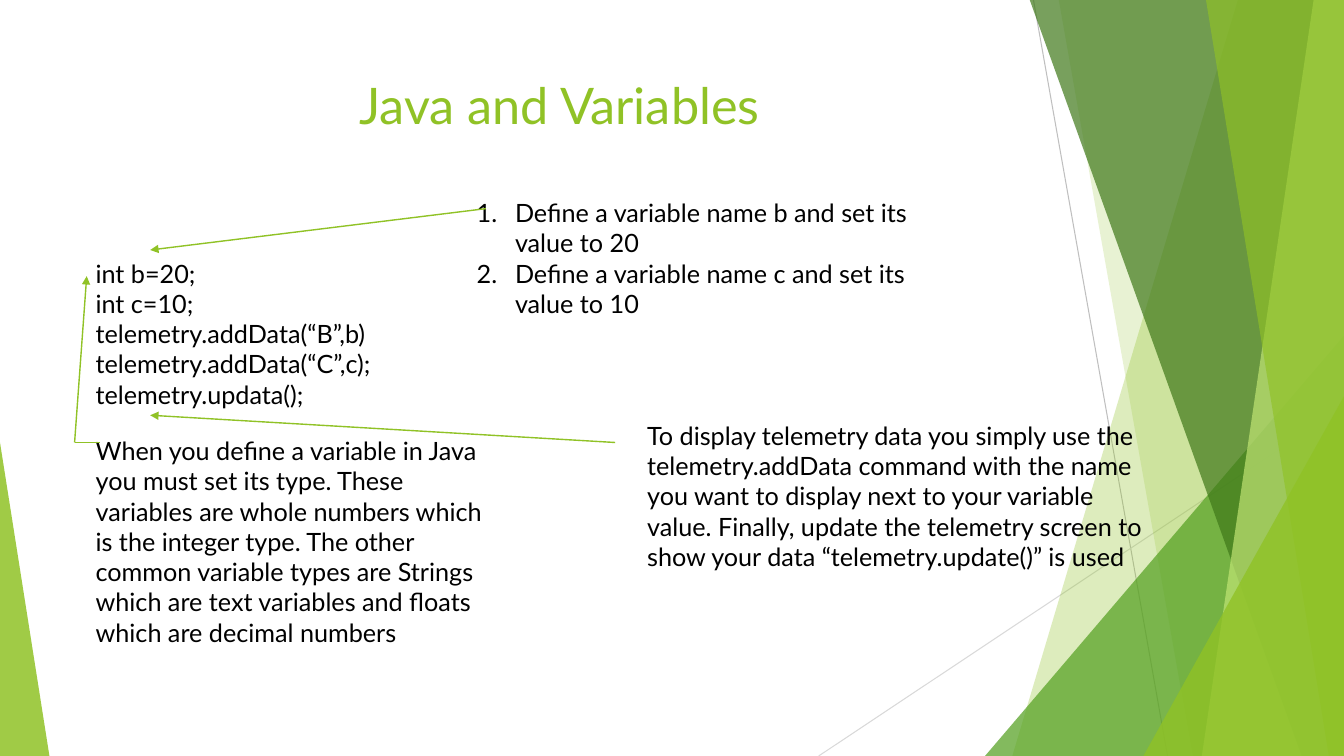
from lxml.etree import SubElement
from pptx import Presentation
from pptx.dml.color import RGBColor
from pptx.enum.shapes import MSO_CONNECTOR, MSO_SHAPE
from pptx.enum.text import MSO_ANCHOR, MSO_AUTO_SIZE, PP_ALIGN
from pptx.oxml.ns import qn
from pptx.util import Inches, Pt

FONT = "Lato"
GREEN = "90C226"
BLACK = "000000"
TOP, RIGHT, BOTTOM = -0.01, 13.33, 7.5

CODE = [
    "int b=20;",
    "int c=10;",
    "telemetry.addData(“B”,b)",
    "telemetry.addData(“C”,c);",
    "telemetry.updata();",
]
STEPS = [
    "Define a variable name b and set its value to 20",
    "Define a variable name c and set its value to 10",
]
TYPES = [
    "When you define a variable in Java you must set its type. These variables "
    "are whole numbers which is the integer type. The other common variable "
    "types are Strings which are text variables and floats which are decimal numbers"
]
DISPLAY = [
    "To display telemetry data you simply use the telemetry.addData command with "
    "the name you want to display next to your variable value. Finally, update "
    "the telemetry screen to show your data “telemetry.update()” is used"
]


def rgb(color):
    return RGBColor.from_string(color)


def style_panel(sp, color, opacity):
    sp.shadow.inherit = False
    sp.line.fill.background()
    sp.fill.solid()
    sp.fill.fore_color.rgb = rgb(color)
    srgb = sp.fill._xPr.find(qn("a:solidFill"))[0]
    SubElement(srgb, qn("a:alpha"), val=str(opacity * 1000))


def add_band(s, top_x, bottom_x, color, opacity):
    builder = s.shapes.build_freeform(Inches(top_x), Inches(TOP), scale=1.0)
    corners = [(RIGHT, TOP), (RIGHT, BOTTOM), (bottom_x, BOTTOM)]
    builder.add_line_segments([(Inches(x), Inches(y)) for x, y in corners], close=True)
    style_panel(builder.convert_to_shape(), color, opacity)


def add_triangle(s, left, top, right, apex, color, opacity):
    sp = s.shapes.add_shape(
        MSO_SHAPE.ISOSCELES_TRIANGLE,
        Inches(left), Inches(top), Inches(right - left), Inches(BOTTOM - top),
    )
    sp.adjustments[0] = apex
    style_panel(sp, color, opacity)


def add_line(s, start, end, color=GREEN, width=1, arrow=False):
    points = [Inches(v) for v in (*start, *end)]
    sp = s.shapes.add_connector(MSO_CONNECTOR.STRAIGHT, *points)
    sp.line.color.rgb = rgb(color)
    sp.line.width = Pt(width)
    if arrow:
        SubElement(sp.line._get_or_add_ln(), qn("a:tailEnd"), type="triangle")
    SubElement(sp._element.spPr, qn("a:effectLst"))


def add_text(s, box, lines, size=18, color=BLACK, numbered=False):
    tf = s.shapes.add_textbox(*[Inches(v) for v in box]).text_frame
    tf.word_wrap = True
    tf.auto_size = MSO_AUTO_SIZE.SHAPE_TO_FIT_TEXT
    tf.text = "\n".join(lines)
    for p in tf.paragraphs:
        if numbered:
            pPr = p._p.get_or_add_pPr()
            pPr.set("marL", str(Inches(0.38)))
            pPr.set("indent", str(-Inches(0.38)))
            SubElement(pPr, qn("a:buAutoNum"), type="arabicPeriod")
        for r in p.runs:
            r.font.name = FONT
            r.font.size = Pt(size)
            r.font.color.rgb = rgb(color)
    return tf


def add_title(s, text):
    tf = add_text(s, (0.85, 0.67, 9.4, 0.74), [text], 36, GREEN)
    tf.auto_size = MSO_AUTO_SIZE.NONE
    tf.vertical_anchor = MSO_ANCHOR.MIDDLE
    tf.paragraphs[0].alignment = PP_ALIGN.CENTER


def add_backdrop(s):
    add_line(s, (10.25, 0), (11.58, BOTTOM), "BFBFBF", 0.75)
    add_line(s, (RIGHT, 4.03), (8.12, BOTTOM), "D9D9D9", 0.75)
    add_band(s, 12.28, 10.04, GREEN, 30)
    add_band(s, 10.5, 11.83, GREEN, 20)
    add_triangle(s, 9.77, 3.33, RIGHT, 1, "54A021", 72)
    add_band(s, 10.21, 12.91, "3F7819", 70)
    add_band(s, 13.03, 11.92, "C0E474", 70)
    add_band(s, 11.96, 13.18, GREEN, 65)
    add_triangle(s, 11.34, 3.93, RIGHT, 1, GREEN, 80)
    add_triangle(s, 0, 4.39, 0.49, 0, GREEN, 85)


def main():
    prs = Presentation()
    prs.slide_width = Inches(13.33)
    prs.slide_height = Inches(7.5)
    s = prs.slides.add_slide(prs.slide_layouts[6])
    add_backdrop(s)
    add_title(s, "Java and Variables")
    add_text(s, (0.85, 2.51, 3.34, 1.62), CODE)
    add_text(s, (4.63, 1.91, 4.5, 1.31), STEPS, numbered=True)
    add_line(s, (4.82, 2.07), (1.49, 2.48), arrow=True)
    add_text(s, (0.85, 4.27, 4.21, 2.22), TYPES)
    add_line(s, (0.99, 4.39), (0.74, 4.39))
    add_line(s, (0.74, 4.39), (0.86, 2.74), arrow=True)
    add_text(s, (6.32, 4.12, 5.15, 1.92), DISPLAY)
    add_line(s, (6.1, 4.39), (1.49, 4.12), arrow=True)
    prs.save("out.pptx")


if __name__ == "__main__":
    main()
